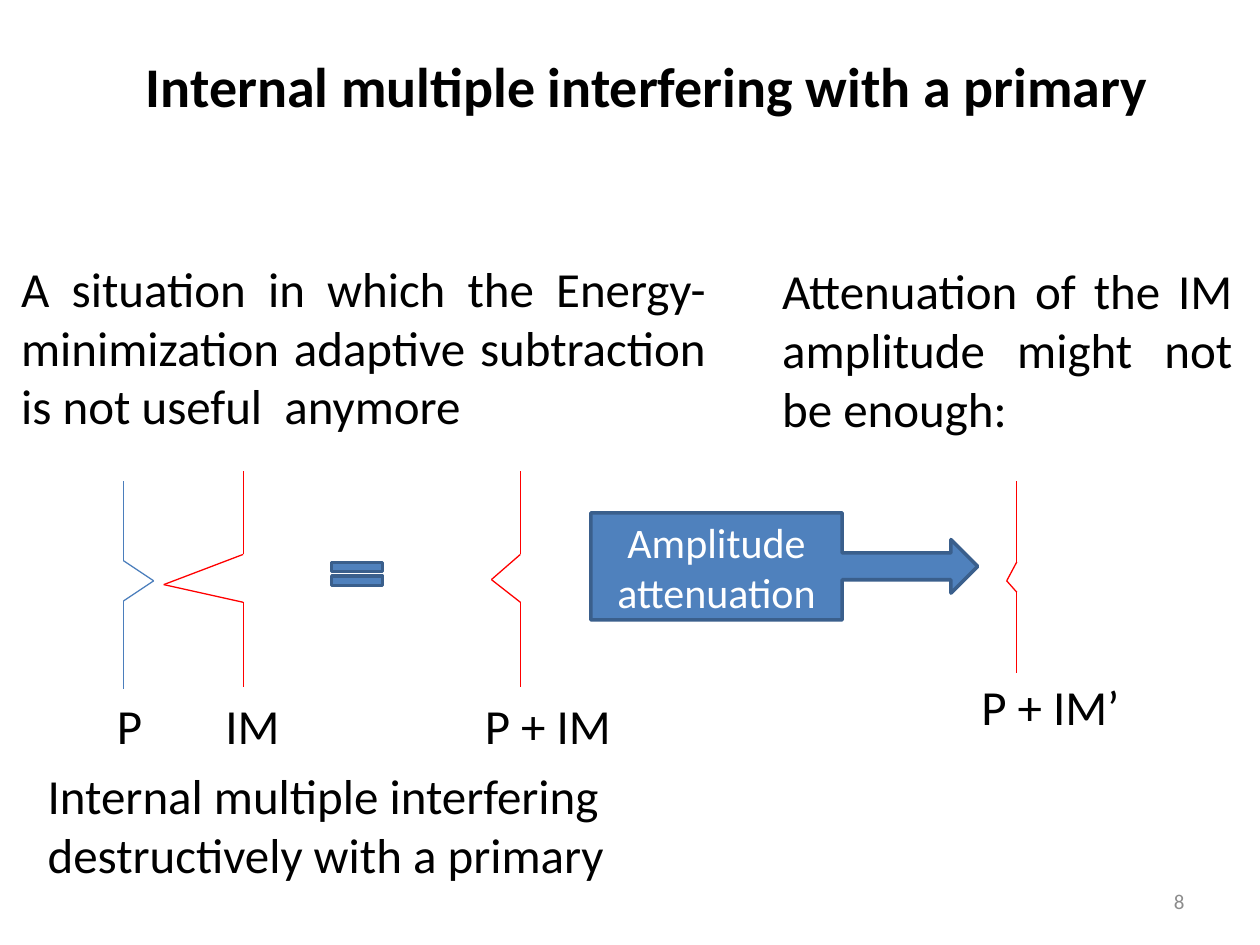
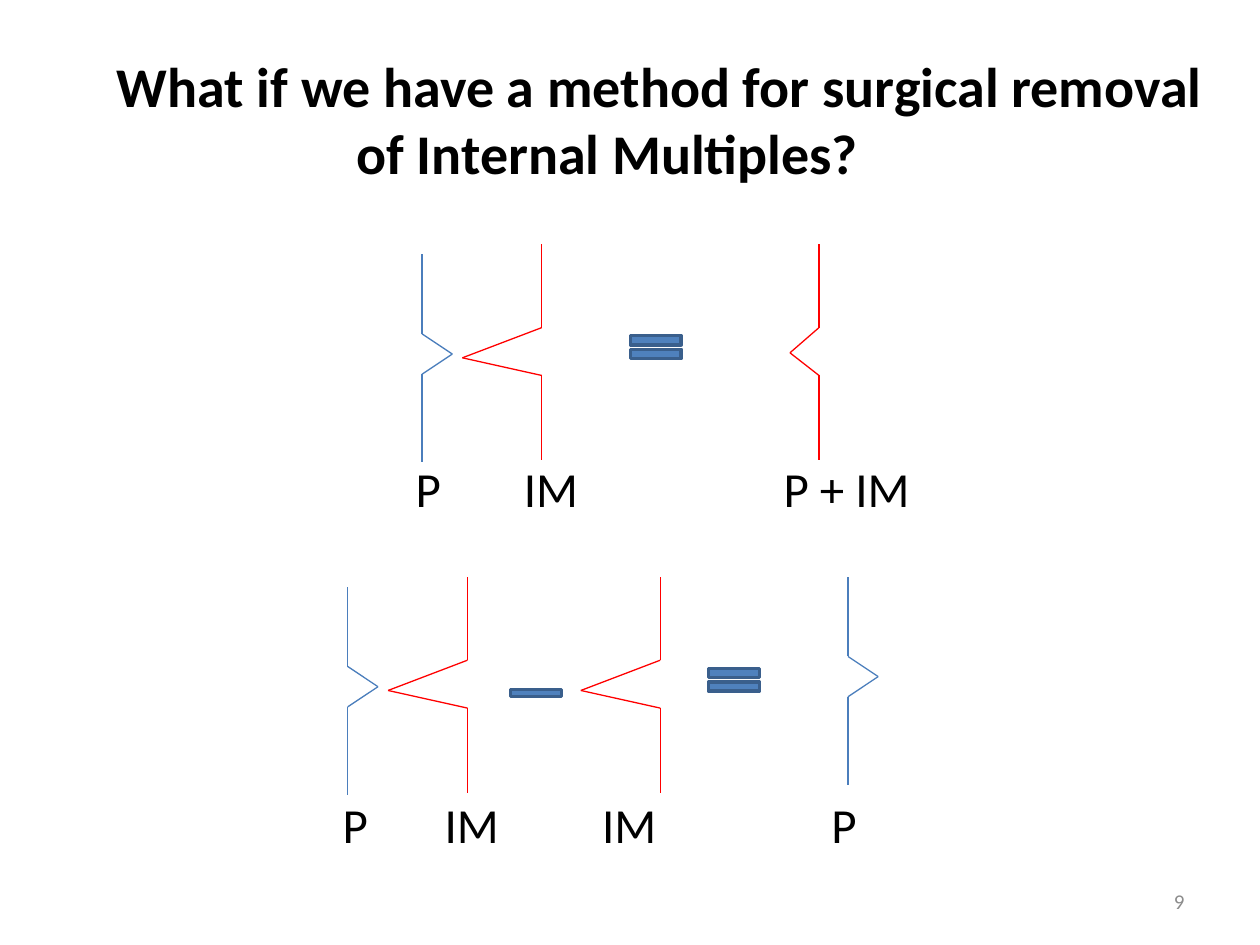
from itertools import pairwise

from lxml.etree import SubElement
from pptx import Presentation
from pptx.dml.color import RGBColor
from pptx.enum.shapes import MSO_CONNECTOR, MSO_SHAPE
from pptx.enum.text import MSO_ANCHOR, PP_ALIGN
from pptx.oxml.ns import qn
from pptx.util import Inches, Pt

FONT = "Calibri"
BLACK, WHITE, GREY = "000000", "FFFFFF", "8C8C8C"
BLUE, RED = "4B7EBC", "FF0000"
SYMBOL_FILL, SYMBOL_EDGE = "4F81BD", "3A5F8C"
SYMBOL_WIDTH = 0.55

PRIMARY = (BLUE, [(0, 0), (0, 0.63), (0.24, 0.79), (0, 0.95), (0, 1.65)])
MULTIPLE = (RED, [(0, 0), (0, 0.66), (-0.63, 0.9), (0, 1.04), (0, 1.71)])
SUM = (RED, [(0, 0), (0, 0.66), (-0.23, 0.86), (0, 1.04), (0, 1.71)])
ATTENUATED_SUM = (RED, [(0, 0), (0, 0.64), (-0.08, 0.79), (0, 0.88), (0, 1.52)])


def rgb(hex_string):
    """Turn a hex string into a colour."""
    return RGBColor.from_string(hex_string)


def write(frame, *lines, size=28, color=BLACK, bold=False,
          align=PP_ALIGN.LEFT, anchor=MSO_ANCHOR.TOP):
    """Fill a text frame with one paragraph per line."""
    frame.word_wrap = True
    frame.vertical_anchor = anchor
    for index, line in enumerate(lines):
        paragraph = frame.add_paragraph() if index else frame.paragraphs[0]
        paragraph.alignment = align
        run = paragraph.add_run()
        run.text = line
        run.font.name, run.font.size, run.font.bold = FONT, Pt(size), bold
        run.font.color.rgb = rgb(color)


def add_text(slide, box, *lines, **style):
    """Place a text box and return its frame."""
    frame = slide.shapes.add_textbox(*map(Inches, box)).text_frame
    write(frame, *lines, **style)
    return frame


def add_symbol(slide, preset, box):
    """Place a blue outlined preset shape."""
    symbol = slide.shapes.add_shape(preset, *map(Inches, box))
    symbol.shadow.inherit = False
    symbol.fill.solid()
    symbol.fill.fore_color.rgb = rgb(SYMBOL_FILL)
    symbol.line.color.rgb = rgb(SYMBOL_EDGE)
    symbol.line.width = Pt(2)
    return symbol


def add_trace(slide, wavelet, left, top):
    """Draw a seismic trace segment by segment from its upper end."""
    color, offsets = wavelet
    points = [(Inches(left + dx), Inches(top + dy)) for dx, dy in offsets]
    for start, end in pairwise(points):
        segment = slide.shapes.add_connector(MSO_CONNECTOR.STRAIGHT, *start, *end)
        segment.line.color.rgb = rgb(color)
        segment.line.width = Pt(0.75)
        SubElement(segment.element.spPr, qn("a:effectLst"))


def add_labels(slide, left, top, labels):
    """Write the trace names along one row."""
    for dx, width, name in labels:
        add_text(slide, (left + dx, top, width, 0.57), name)


def add_interference(slide, left, top, label_drop):
    """Show that primary and multiple superpose into their sum."""
    add_trace(slide, PRIMARY, left, top + 0.08)
    add_trace(slide, MULTIPLE, left + 0.95, top)
    add_symbol(slide, MSO_SHAPE.MATH_EQUAL, (left + 1.58, top + 0.66, SYMBOL_WIDTH, 0.31))
    add_trace(slide, SUM, left + 3.15, top)
    add_labels(slide, left, top + label_drop,
               [(-0.15, 0.41, "P"), (0.71, 0.64, "IM"), (2.77, 1.22, "P + IM")])


def add_attenuation(slide, left, top):
    """Show the attenuation step and the trace it leaves."""
    callout = add_symbol(slide, MSO_SHAPE.RIGHT_ARROW_CALLOUT, (left, top + 0.25, 3.07, 0.85))
    write(callout.text_frame, "Amplitude attenuation", size=24, color=WHITE,
          align=PP_ALIGN.CENTER, anchor=MSO_ANCHOR.MIDDLE)
    add_trace(slide, ATTENUATED_SUM, left + 3.38, top)
    add_labels(slide, left, top + 1.5, [(3, 1.31, "P + IM’")])


def add_removal(slide, left, top):
    """Show that subtracting the multiple leaves the primary."""
    add_trace(slide, PRIMARY, left, top + 0.08)
    add_trace(slide, MULTIPLE, left + 0.95, top)
    add_symbol(slide, MSO_SHAPE.MATH_MINUS, (left + 1.22, top + 0.81, SYMBOL_WIDTH, 0.22))
    add_trace(slide, MULTIPLE, left + 2.48, top)
    add_symbol(slide, MSO_SHAPE.MATH_EQUAL, (left + 2.79, top + 0.66, SYMBOL_WIDTH, 0.31))
    add_trace(slide, PRIMARY, left + 3.97, top)
    add_labels(slide, left, top + 1.68,
               [(-0.14, 0.41, "P"), (0.67, 0.64, "IM"),
                (1.92, 0.64, "IM"), (3.74, 0.41, "P")])


def add_frame(deck, number, title_box, *title):
    """Start a slide with its title and number."""
    slide = deck.slides.add_slide(deck.slide_layouts[6])
    heading = add_text(slide, title_box, *title, size=32, bold=True)
    for paragraph in heading.paragraphs[1:]:
        properties = paragraph._p.get_or_add_pPr()
        properties.set("marL", str(Inches(1.9)))
        properties.set("indent", "0")
    add_text(slide, (7.17, 6.95, 2.33, 0.4), str(number), size=12, color=GREY,
             align=PP_ALIGN.RIGHT, anchor=MSO_ANCHOR.MIDDLE)
    return slide


def build_interfering_slide(deck):
    """Build the slide on a multiple that hides a primary."""
    slide = add_frame(deck, 8, (1.06, 0.36, 8.33, 0.64),
                      "Internal multiple interfering with a primary")
    add_interference(slide, 0.98, 3.74, 1.73)
    add_attenuation(slide, 4.69, 3.82)
    add_text(slide, (0.07, 2, 5.63, 1.51),
             "A situation in which the Energy-minimization adaptive subtraction "
             "is not useful  anymore", align=PP_ALIGN.JUSTIFY)
    add_text(slide, (6.11, 2.02, 3.77, 1.51),
             "Attenuation of the IM amplitude might not be enough:",
             align=PP_ALIGN.JUSTIFY)
    add_text(slide, (0.28, 6.03, 5.28, 1.04),
             "Internal multiple interfering destructively with a primary")


def build_removal_slide(deck):
    """Build the slide on surgical removal of multiples."""
    slide = add_frame(deck, 9, (0.83, 0.36, 8.89, 1.18),
                      "What if we have a method for surgical removal",
                      "of Internal Multiples?")
    add_interference(slide, 3.35, 1.94, 1.65)
    add_removal(slide, 2.76, 4.58)


def main():
    """Build and save the deck."""
    deck = Presentation()
    deck.slide_width, deck.slide_height = Inches(10), Inches(7.5)
    build_interfering_slide(deck)
    build_removal_slide(deck)
    deck.save("out.pptx")


if __name__ == "__main__":
    main()
